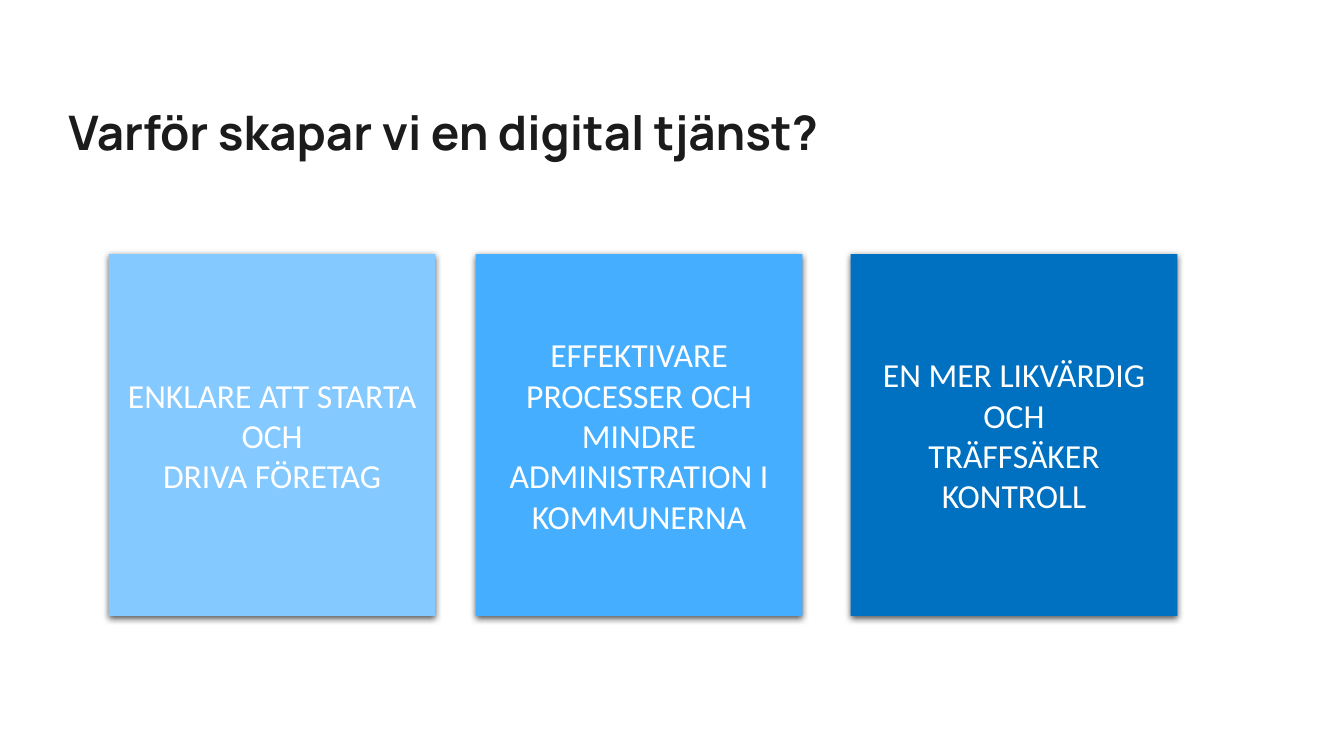
"""Build the slide explaining why a digital service is being created."""
from dataclasses import dataclass

from lxml import etree
from pptx import Presentation
from pptx.dml.color import RGBColor
from pptx.enum.shapes import MSO_SHAPE
from pptx.enum.text import MSO_ANCHOR, PP_ALIGN
from pptx.oxml.ns import qn
from pptx.shapes.autoshape import Shape
from pptx.slide import Slide
from pptx.text.text import TextFrame
from pptx.util import Pt

RECTANGLE = MSO_SHAPE.RECTANGLE
MIDDLE = MSO_ANCHOR.MIDDLE
BOTTOM = MSO_ANCHOR.BOTTOM
CENTER = PP_ALIGN.CENTER

COLORS = {
    "ink": "1B1B1B",
    "white": "FFFFFF",
    "shadow": "000000",
    "light": "84C9FF",
    "medium": "46AEFF",
    "dark": "0070C0",
}
CARD_TOP, CARD_WIDTH, CARD_HEIGHT = 181.44, 233.28, 258.48


@dataclass(frozen=True)
class Reason:
    text: str
    left: float
    color: str


REASONS = [
    Reason("ENKLARE ATT STARTA OCH\vDRIVA FÖRETAG", 77.76, "light"),
    Reason("EFFEKTIVARE PROCESSER OCH MINDRE ADMINISTRATION I KOMMUNERNA", 339.84, "medium"),
    Reason("EN MER LIKVÄRDIG OCH\vTRÄFFSÄKER KONTROLL", 607.68, "dark"),
]


def rgb(name: str) -> RGBColor:
    return RGBColor.from_string(COLORS[name])


def write(frame: TextFrame, text: str, font: str, size: float, color: str, bold: bool = False) -> None:
    frame.word_wrap = True
    frame.text = text
    for run in frame.paragraphs[0].runs:
        run.font.name = font
        run.font.size = Pt(size)
        run.font.bold = bold
        run.font.color.rgb = rgb(color)


def add_soft_shadow(card: Shape) -> None:
    card.shadow.inherit = False
    effects = card._element.spPr.find(qn("a:effectLst"))
    shadow = etree.SubElement(
        effects, qn("a:outerShdw"),
        blurRad=str(Pt(4.5)), dist=str(Pt(1.5)), dir="5400000", rotWithShape="0",
    )
    tint = etree.SubElement(shadow, qn("a:srgbClr"), val=COLORS["shadow"])
    etree.SubElement(tint, qn("a:alpha"), val="63000")


def add_title(slide: Slide, text: str) -> None:
    title = slide.shapes.add_textbox(Pt(48.96), Pt(28.8), Pt(861.12), Pt(86.4))
    frame = title.text_frame
    frame.margin_left = frame.margin_right = frame.margin_top = frame.margin_bottom = Pt(0)
    frame.vertical_anchor = BOTTOM
    write(frame, text, "Manrope", 34, "ink", bold=True)
    frame.paragraphs[0].line_spacing = 0.9


def add_reason(slide: Slide, reason: Reason) -> None:
    card = slide.shapes.add_shape(
        RECTANGLE, Pt(reason.left), Pt(CARD_TOP), Pt(CARD_WIDTH), Pt(CARD_HEIGHT)
    )
    card.fill.solid()
    card.fill.fore_color.rgb = rgb(reason.color)
    card.line.fill.background()
    add_soft_shadow(card)
    card.text_frame.vertical_anchor = MIDDLE
    write(card.text_frame, reason.text, "Calibri", 24, "white")
    card.text_frame.paragraphs[0].alignment = CENTER


def main() -> None:
    presentation = Presentation()
    presentation.slide_width = Pt(960)
    presentation.slide_height = Pt(540)
    slide = presentation.slides.add_slide(presentation.slide_layouts[6])
    add_title(slide, "Varför skapar vi en digital tjänst?")
    for reason in REASONS:
        add_reason(slide, reason)
    presentation.save("out.pptx")


if __name__ == "__main__":
    main()
